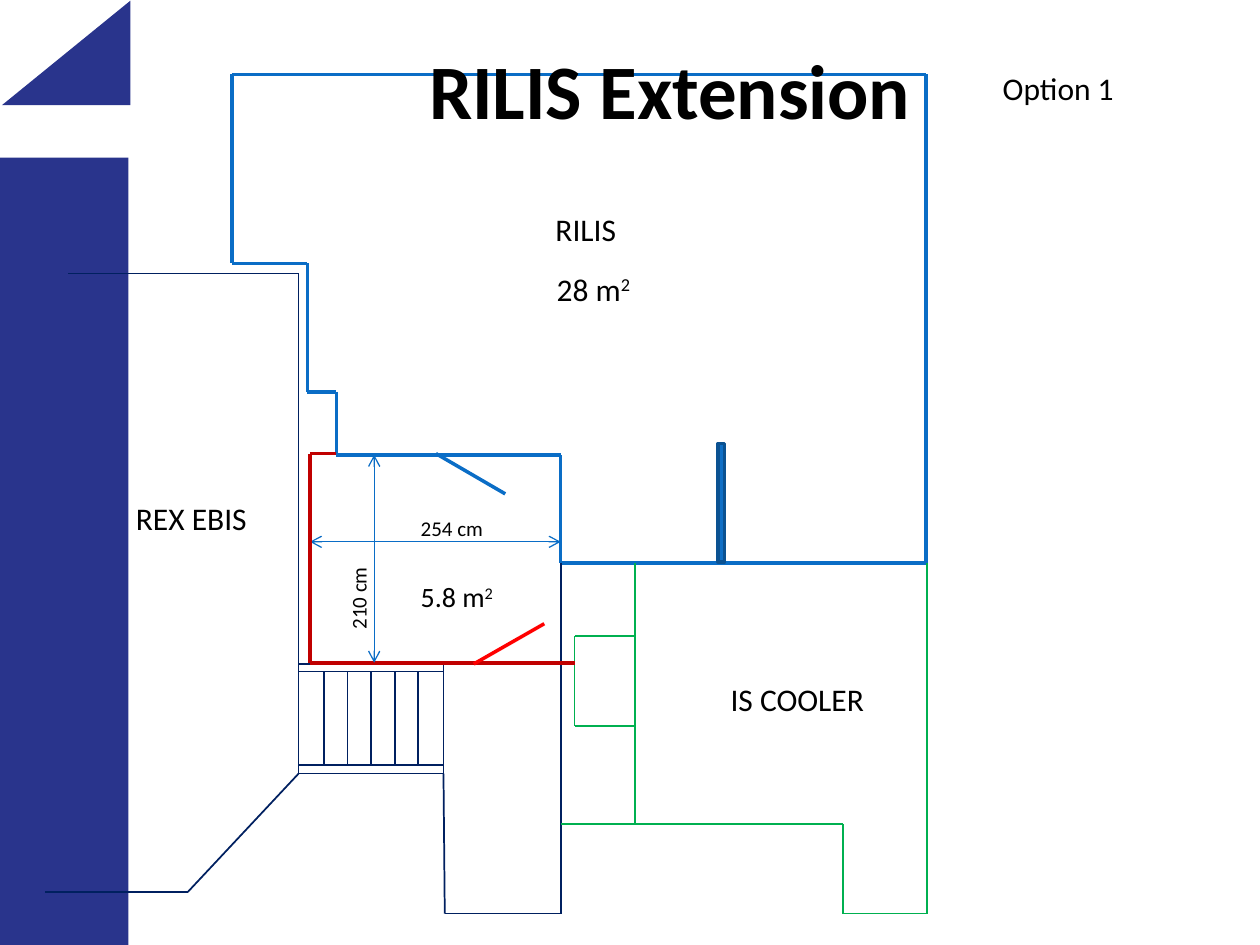
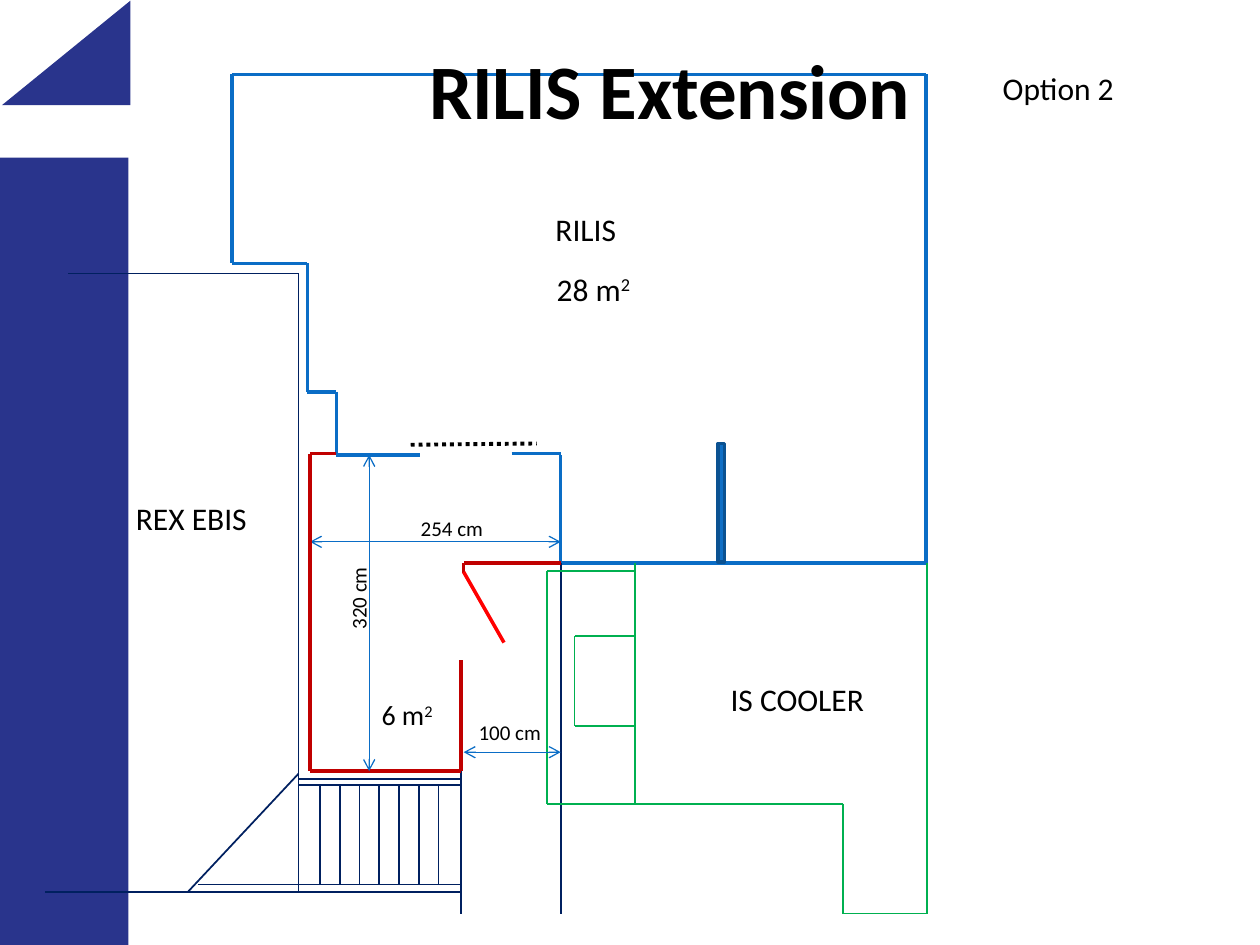
"""Build the two floor plan options for the RILIS extension."""
from itertools import pairwise

from lxml.etree import SubElement
from pptx import Presentation
from pptx.dml.color import RGBColor
from pptx.enum.dml import MSO_LINE_DASH_STYLE as Dash
from pptx.enum.shapes import MSO_CONNECTOR as Connector, MSO_SHAPE as Shape
from pptx.enum.text import MSO_ANCHOR as Anchor, MSO_AUTO_SIZE as AutoSize, PP_ALIGN as Align
from pptx.oxml.ns import qn
from pptx.util import Inches, Pt

COLORS = {"band": "29348C", "rilis": "0A6DC6", "cooler": "00B050", "rex": "002060",
          "new": "C00000", "door": "FF0000", "pillar": "0F6FC6", "pillar_edge": "0B5292",
          "text": "000000"}

STYLES = {"rilis": ("rilis", 2), "cooler": ("cooler", 1), "rex": ("rex", 1),
          "new": ("new", 2), "door": ("door", 2), "measure": ("rilis", 0.75),
          "sliding": ("text", 2.25)}

FONT = "Calibri"
TITLE = "RILIS Extension"
TITLE_BOX = (1.14, 0.08, 8.36, 1.25)
BANDS = [(Shape.RECTANGLE, (0, 1.25, 1.02, 6.25), 0),
         (Shape.RIGHT_TRIANGLE, (0.11, -0.09, 0.83, 1.02), 270)]
PILLAR = (5.7, 3.52, 0.05, 0.94)

SHARED_WALLS = [
    ("rilis", (1.84, 0.59), (7.35, 0.59), (7.35, 4.47), (4.45, 4.47), (4.45, 3.61)),
    ("rilis", (1.84, 0.59), (1.84, 2.09), (2.44, 2.09), (2.44, 3.11), (2.67, 3.11),
     (2.67, 3.61)),
    ("cooler", (5.04, 5.05), (4.56, 5.05), (4.56, 5.76), (5.04, 5.76)),
    ("cooler", (6.69, 7.25), (7.36, 7.25), (7.36, 4.47)),
    ("rex", (0.54, 2.17), (2.37, 2.17), (2.37, 6.14), (1.49, 7.08), (0.36, 7.08)),
    ("rex", (4.45, 4.47), (4.45, 7.25)),
    ("measure", (2.46, 4.3), (4.45, 4.3)),
]

SHARED_LABELS = [
    ("RILIS", (4.31, 1.62, 0.69, 0.4), 18, 0),
    ("28 m²", (4.32, 2.09, 0.8, 0.4), 18, 0),
    ("REX EBIS", (0.98, 3.91, 1.09, 0.4), 18, 0),
    ("IS COOLER", (5.7, 5.35, 1.27, 0.4), 18, 0),
    ("254 cm", (3.24, 4.04, 0.71, 0.3), 12, 0),
]
OPTION_BOX = (7.86, 0.5, 1.09, 0.4)
DEPTH_BOX = (2.49, 4.59, 0.71, 0.3)

OPTIONS = [
    {
        "name": "Option 1",
        "depth": "210 cm",
        "labels": [("5.8 m²", (3.24, 4.55, 0.79, 0.37), 16, 0)],
        "treads": {"first": 2.57, "last": 3.32, "count": 5, "top": 5.33, "bottom": 6.07},
        "walls": [
            ("rilis", (2.67, 3.61), (4.45, 3.61)),
            ("rilis", (3.46, 3.6), (4.01, 3.92)),
            ("cooler", (5.04, 4.47), (5.04, 6.54)),
            ("cooler", (4.45, 6.54), (6.69, 6.54), (6.69, 7.25)),
            ("rex", (2.37, 5.27), (3.52, 5.27), (3.52, 6.14), (2.37, 6.14)),
            ("rex", (2.37, 5.33), (3.52, 5.33)),
            ("rex", (2.37, 6.07), (3.52, 6.07)),
            ("rex", (3.52, 6.14), (3.53, 7.25), (4.45, 7.25)),
            ("new", (2.67, 3.6), (2.46, 3.6), (2.46, 5.26), (4.56, 5.26)),
            ("door", (3.76, 5.27), (4.32, 4.95)),
            ("measure", (2.97, 3.61), (2.97, 5.26)),
        ],
    },
    {
        "name": "Option 2",
        "depth": "320 cm",
        "labels": [("6 m²", (2.93, 5.49, 0.62, 0.37), 16, 0),
                   ("100 cm", (3.7, 5.66, 0.71, 0.3), 12, 0)],
        "treads": {"first": 2.54, "last": 3.48, "count": 7, "top": 6.23, "bottom": 7.02},
        "walls": [
            ("rilis", (2.67, 3.61), (3.33, 3.61)),
            ("rilis", (4.06, 3.6), (4.45, 3.6)),
            ("sliding", (3.26, 3.53), (4.26, 3.52)),
            ("cooler", (5.04, 4.47), (5.04, 6.38)),
            ("cooler", (5.04, 4.53), (4.34, 4.53), (4.34, 6.38), (6.69, 6.38),
             (6.69, 7.25)),
            ("rex", (2.37, 6.14), (2.37, 7.08)),
            ("rex", (1.49, 7.08), (3.67, 7.08)),
            ("rex", (2.37, 6.18), (3.66, 6.18)),
            ("rex", (2.37, 6.23), (3.66, 6.23)),
            ("rex", (1.57, 7.02), (3.66, 7.02)),
            ("rex", (3.66, 6.12), (3.66, 7.25)),
            ("new", (2.67, 3.6), (2.46, 3.6), (2.46, 6.12), (3.66, 6.12), (3.66, 5.24)),
            ("new", (4.45, 4.47), (3.68, 4.47), (3.68, 4.55)),
            ("door", (3.68, 4.54), (4, 5.1)),
            ("measure", (2.93, 3.61), (2.93, 6.12)),
            ("measure", (3.68, 5.97), (4.45, 5.97)),
        ],
    },
]


def color(name):
    """Return the named colour."""
    return RGBColor.from_string(COLORS[name])


def inches(lengths):
    """Convert a series of numbers to lengths."""
    return [Inches(length) for length in lengths]


def apply(target, values):
    """Set each attribute in values on the target."""
    for attribute, value in values.items():
        setattr(target, attribute, value)


def add_block(slide, outline, place, fill, edge=None, rotation=0):
    """Add a flat filled shape."""
    block = slide.shapes.add_shape(outline, *inches(place))
    block.rotation = rotation
    block.shadow.inherit = False
    block.fill.solid()
    block.fill.fore_color.rgb = color(fill)
    if edge:
        block.line.color.rgb = color(edge)
        block.line.width = Pt(2)
    else:
        block.line.fill.background()
    return block


def add_wall(slide, style, *corners):
    """Join the corners with straight lines of one style."""
    shade, width = STYLES[style]
    for start, end in pairwise(corners):
        wall = slide.shapes.add_connector(Connector.STRAIGHT, *inches(start + end))
        wall.line.color.rgb = color(shade)
        wall.line.width = Pt(width)
        if style == "sliding":
            wall.line.dash_style = Dash.ROUND_DOT
        if style == "measure":
            for tip in ("a:headEnd", "a:tailEnd"):
                SubElement(wall.line._get_or_add_ln(), qn(tip), type="arrow")
        SubElement(wall.element.spPr, qn("a:effectLst"))


def add_treads(slide, first, last, count, top, bottom):
    """Draw evenly spaced stair treads."""
    step = (last - first) / (count - 1)
    for number in range(count):
        x = first + number * step
        add_wall(slide, "rex", (x, top), (x, bottom))


def add_label(slide, wording, place, size, rotation):
    """Add a label, raising a closing square sign."""
    label = slide.shapes.add_textbox(*inches(place))
    label.rotation = rotation
    apply(label.text_frame, {"word_wrap": False, "auto_size": AutoSize.SHAPE_TO_FIT_TEXT})
    line = label.text_frame.paragraphs[0]
    base = wording.removesuffix("²")
    for part in [base] if base == wording else [base, "2"]:
        run = line.add_run()
        run.text = part
        apply(run.font, {"name": FONT, "size": Pt(size)})
        run.font.color.rgb = color("text")
    if base != wording:
        run._r.get_or_add_rPr().set("baseline", "30000")


def add_title(slide):
    """Fill the title and bring it to the front."""
    title = slide.shapes.title
    apply(title, dict(zip(("left", "top", "width", "height"), inches(TITLE_BOX))))
    title.text_frame.text = TITLE
    title.text_frame.vertical_anchor = Anchor.MIDDLE
    heading = title.text_frame.paragraphs[0]
    heading.alignment = Align.CENTER
    apply(heading.runs[0].font, {"name": FONT, "size": Pt(44), "bold": True})
    heading.runs[0].font.color.rgb = color("text")
    slide.shapes.element.append(title.element)


def add_option(deck, layout, option):
    """Add one floor plan."""
    slide = deck.slides.add_slide(layout)
    for outline, place, rotation in BANDS:
        add_block(slide, outline, place, "band", rotation=rotation)
    for wall in SHARED_WALLS + option["walls"]:
        add_wall(slide, *wall)
    add_treads(slide, **option["treads"])
    add_block(slide, Shape.RECTANGLE, PILLAR, "pillar", "pillar_edge")
    own_labels = [(option["name"], OPTION_BOX, 18, 0), (option["depth"], DEPTH_BOX, 12, 270)]
    for label in SHARED_LABELS + own_labels + option["labels"]:
        add_label(slide, *label)
    add_title(slide)


def main():
    """Build and save the deck."""
    deck = Presentation()
    apply(deck, {"slide_width": Inches(10), "slide_height": Inches(7.5)})
    title_only = deck.slide_layouts.get_by_name("Title Only")
    for option in OPTIONS:
        add_option(deck, title_only, option)
    deck.save("out.pptx")


if __name__ == "__main__":
    main()
